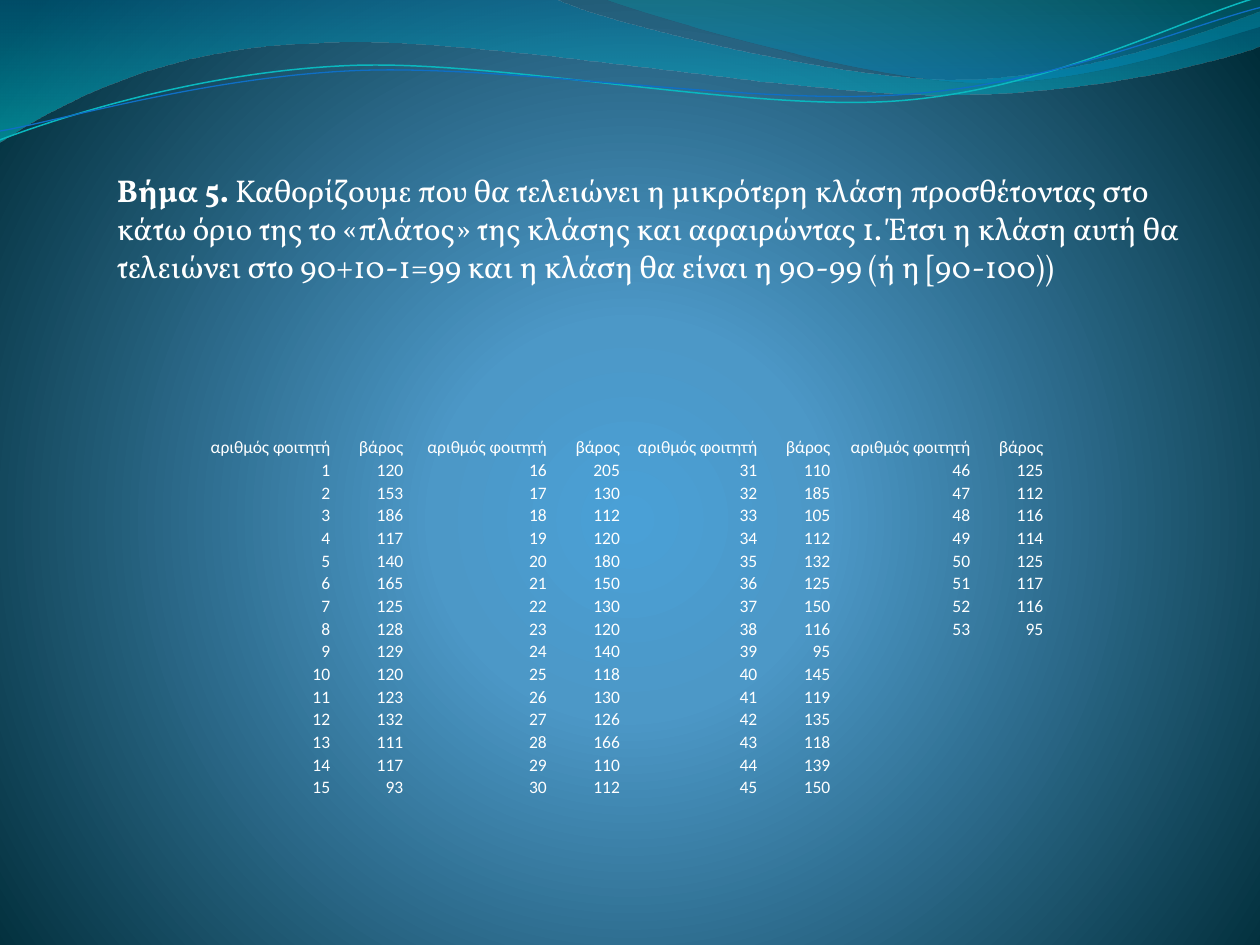
from math import cos, radians, sin

from pptx import Presentation
from pptx.dml.color import RGBColor
from pptx.enum.text import MSO_ANCHOR, PP_ALIGN
from pptx.oxml import parse_xml
from pptx.oxml.ns import nsdecls, qn
from pptx.util import Inches, Pt

RIGHT = PP_ALIGN.RIGHT
BOTTOM = MSO_ANCHOR.BOTTOM
COLORS = {
    "glow": "4AA0D6", "sky": "4C98C7", "night": "002C38",
    "blue": "0074A1", "aqua": "00C6CF", "teal": "00A1A9", "sea": "008BBF",
    "cyan": "0AB8BF", "royal": "0F6FC6", "white": "FFFFFF",
}
TILT = 2.7


def shade(fill, root, stops, form):
    """Fill with (position, colour, opacity) stops, all in percent."""
    fill.gradient()
    grad = root.find(".//" + qn("a:gradFill"))
    for child in list(grad):
        grad.remove(child)
    marks = "".join(
        f'<a:gs pos="{pos * 1000}"><a:srgbClr val="{COLORS[name]}">'
        f'<a:alpha val="{alpha * 1000}"/></a:srgbClr></a:gs>'
        for pos, name, alpha in stops)
    grad.append(parse_xml(f'<a:gsLst {nsdecls("a")}>{marks}</a:gsLst>'))
    grad.append(parse_xml(form))


def trace(shapes, parts, close):
    """Draw parts of one point (straight) or three points (cubic Bézier)."""
    points = [(Inches(x), Inches(y)) for part in parts for x, y in part]
    pen = shapes.build_freeform(*points[0])
    pen.add_line_segments(points[1:], close=close)
    shape = pen.convert_to_shape()
    shape.shadow.inherit = False
    steps = iter(list(shape._element.iter(qn("a:lnTo"))))
    for part in parts[1:]:
        group = [next(steps) for _ in part]
        if len(group) == 3:
            curve = parse_xml(f'<a:cubicBezTo {nsdecls("a")}/>')
            group[0].addprevious(curve)
            for step in group:
                curve.append(step[0])
                step.getparent().remove(step)
    return shape


prs = Presentation()
prs.slide_width, prs.slide_height = Inches(10), Inches(7.5)
slide = prs.slides.add_slide(prs.slide_layouts[6])
shapes = slide.shapes

# Background
shade(slide.background.fill, slide._element,
      [(0, "glow", 100), (25, "sky", 100), (100, "night", 100)],
      f'<a:path {nsdecls("a")} path="circle"><a:fillToRect l="10000" '
      't="110000" r="10000" b="100000"/></a:path>')

# Waves
waves = [
    ([[(0, 0)], [(4.4, -0.01)],
      [(4.76, 0.17), (6.64, 0.63), (7.58, 0.63)],
      [(8.53, 0.63), (9.58, 0.26), (10, 0.09)], [(10.01, 0.36)],
      [(9.83, 0.44), (8.7, 0.76), (7.46, 0.75)],
      [(6.22, 0.75), (3.82, 0.28), (2.57, 0.34)],
      [(1.29, 0.36), (0.46, 0.83), (-0.01, 1.13)]],
     [(0, "blue", 45), (100, "aqua", 55)]),
    ([[(4.79, -0.01)],
      [(5.09, 0.11), (6.82, 0.62), (7.69, 0.65)],
      [(8.56, 0.69), (9.61, 0.32), (10, 0.21)], [(10, 0)]],
     [(0, "teal", 30), (80, "sea", 45)]),
]
for parts, stops in waves:
    wave = trace(shapes, parts, True)
    shade(wave.fill, wave._element, stops,
          f'<a:lin {nsdecls("a")} ang="5400000" scaled="0"/>')
    wave.line.fill.background()

# Tilted lines: points are turned level about the middle, then the shape is tilted
lines = [
    ([[(0, 1.11)],
      [(0.48, 0.93), (1.58, 0.57), (2.77, 0.52)],
      [(3.95, 0.47), (5.93, 0.89), (7.13, 0.8)],
      [(8.33, 0.71), (9.38, 0.15), (9.98, -0.02)]], "cyan", 0.85),
    ([[(0, 1.04)],
      [(0.47, 0.96), (1.64, 0.61), (2.83, 0.56)],
      [(4.03, 0.51), (5.97, 0.84), (7.17, 0.75)],
      [(8.36, 0.67), (9.41, 0.21), (10, 0.06)]], "royal", 0.75),
]
mid_x, mid_y = 4.99, 0.58
c, s = cos(radians(TILT)), sin(radians(TILT))
for parts, name, width in lines:
    level = [[(mid_x + (x - mid_x) * c - (y - mid_y) * s,
               mid_y + (x - mid_x) * s + (y - mid_y) * c) for x, y in part]
             for part in parts]
    line = trace(shapes, level, False)
    line.rotation = 360 - TILT
    line.fill.background()
    line.line.color.rgb = RGBColor.from_string(COLORS[name])
    line.line.width = Pt(width)

# Step text
box = shapes.add_textbox(Inches(0.83), Inches(1.31), Inches(8.9), Inches(3.74))
box.text_frame.word_wrap = True
para = box.text_frame.paragraphs[0]
texts = [
    ("Βήμα 5. ", True),
    ("Καθορίζουμε που θα τελειώνει η μικρότερη κλάση προσθέτοντας στο κάτω όριο "
     "της το «πλάτος» της κλάσης και αφαιρώντας 1. Έτσι η κλάση αυτή θα τελειώνει "
     "στο 90+10-1=99 και η κλάση θα είναι η 90-99 (ή η [90-100))", False),
]
for text, bold in texts:
    run = para.add_run()
    run.text = text
    run.font.name, run.font.size, run.font.bold = "Vollkorn", Pt(18), bold
    run.font.color.rgb = RGBColor.from_string(COLORS["white"])

# Weights of the students, 15 to a column; the top row stays empty
weights = [
    120, 153, 186, 117, 140, 165, 125, 128, 129, 120, 123, 132, 111, 117, 93,
    205, 130, 112, 120, 180, 150, 130, 120, 140, 118, 130, 126, 166, 110, 112,
    110, 185, 105, 112, 132, 125, 150, 116, 95, 145, 119, 135, 118, 139, 150,
    125, 112, 116, 114, 125, 117, 116, 95,
]
COUNT = 15
grid = [[""] * 8, ["αριθμός φοιτητή", "βάρος"] * 4]
grid += [[""] * 8 for _ in range(COUNT)]
for i, weight in enumerate(weights):
    col, row = divmod(i, COUNT)
    grid[row + 2][2 * col:2 * col + 2] = [str(i + 1), str(weight)]

widths = [1.02, 0.58, 1.14, 0.58, 1.09, 0.58, 1.11, 0.58]
table = shapes.add_table(len(grid), len(widths), Inches(1.61), Inches(3.28),
                         Inches(sum(widths)), Inches(0.18 * len(grid))).table
table.first_row = table.horz_banding = False
# Built-in style without fills or grid lines
style = table._tbl.tblPr.find(qn("a:tableStyleId"))
style.text = "{2D5ABB26-0587-4C30-8999-92F81FD0307C}"
for col, width in zip(table.columns, widths):
    col.width = Inches(width)
for row, values in zip(table.rows, grid):
    row.height = Inches(0.18)
    for cell, value in zip(row.cells, values):
        cell.fill.background()
        cell.vertical_anchor = BOTTOM
        cell.margin_left = cell.margin_right = cell.margin_top = Inches(0.01)
        cell.margin_bottom = 0
        para = cell.text_frame.paragraphs[0]
        para.text = value
        para.alignment = RIGHT
        if not value:
            para._p.get_or_add_endParaRPr().set("sz", "1000")
        for run in para.runs:
            run.font.name, run.font.size = "Calibri", Pt(10)
            run.font.color.rgb = RGBColor.from_string(COLORS["white"])

prs.save("out.pptx")
